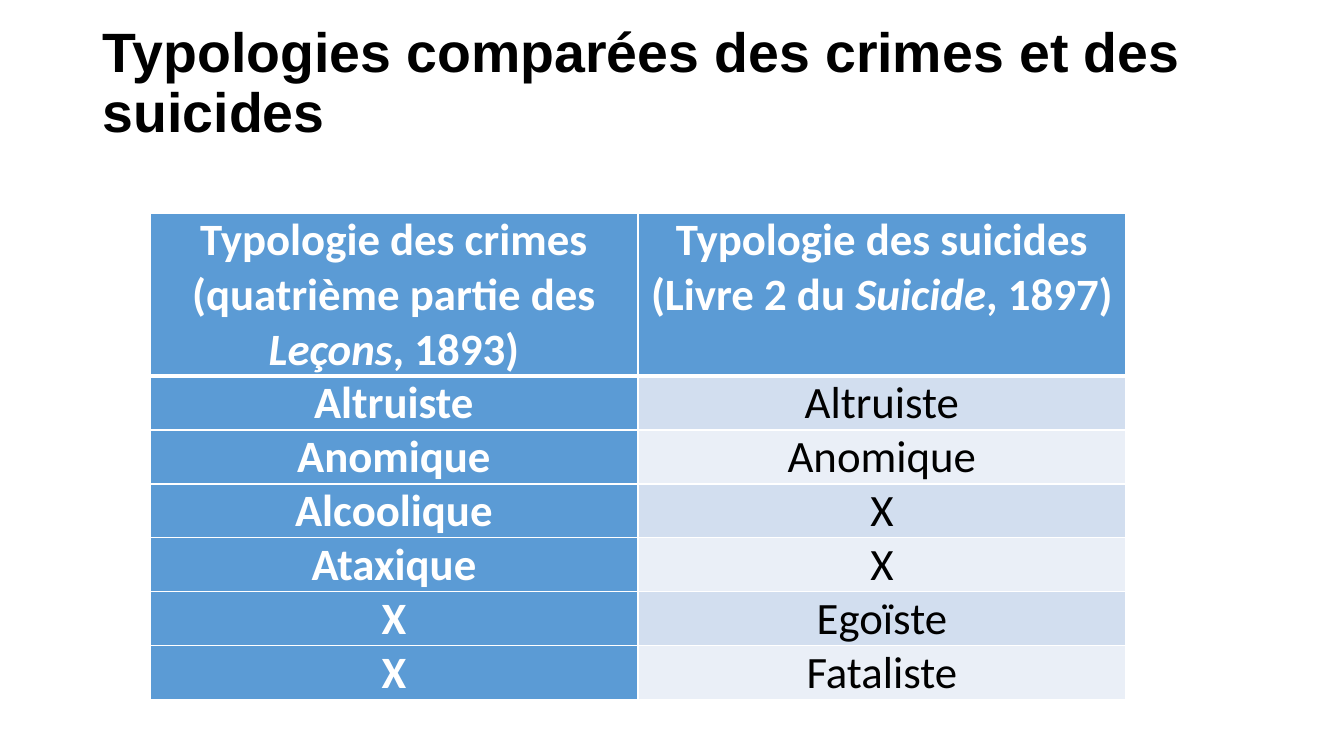
"""Build a slide comparing the typologies of crimes and suicides."""
from typing import Any, NamedTuple

from lxml.etree import SubElement
from pptx import Presentation
from pptx.dml.color import RGBColor
from pptx.enum.text import MSO_ANCHOR, PP_ALIGN
from pptx.oxml.ns import qn
from pptx.util import Emu, Pt

WHITE, BLACK, BLUE = "FFFFFF", "000000", "5B9BD5"
BANDS = ("D2DEEF", "EAEFF7")
HEADER_H, ROW_H, COL_W = 163, 54, 488


class Look(NamedTuple):
    """Fill, text colour and weight of a table cell."""
    fill: str
    color: str
    bold: bool


class Row(NamedTuple):
    """Matching types of crime and suicide."""
    crime: str
    suicide: str


HEADER = Row(
    "Typologie des crimes\n(quatrième partie des *Leçons*, 1893)",
    "Typologie des suicides\n(Livre 2 du *Suicide*, 1897)",
)
ROWS = [
    HEADER,
    Row("Altruiste", "Altruiste"),
    Row("Anomique", "Anomique"),
    Row("Alcoolique", "X"),
    Row("Ataxique", "X"),
    Row("X", "Egoïste"),
    Row("X", "Fataliste"),
]


def px(n: int) -> Emu:
    """Turn pixels into EMU."""
    return Emu(round(n * 914400 / 100.8))


def rgb(color: str) -> RGBColor:
    """Turn a hex string into a colour."""
    return RGBColor.from_string(color)


def set_attrs(obj: Any, values: dict[str, Any]) -> None:
    """Set each named attribute on an object."""
    for name, value in values.items():
        setattr(obj, name, value)


def add_run(p: Any, text: str, color: str, fmt: dict[str, Any]) -> None:
    """Add a formatted run to a paragraph."""
    r = p.add_run()
    r.text = text
    set_attrs(r.font, fmt)
    r.font.color.rgb = rgb(color)


def add_title(s: Any, text: str) -> None:
    """Add the slide title."""
    sp = s.shapes.add_textbox(px(93), px(40), px(1159), px(146))
    tf = sp.text_frame
    set_attrs(tf, {
        "word_wrap": True, "vertical_anchor": MSO_ANCHOR.MIDDLE,
        "margin_left": px(10), "margin_right": px(10),
        "margin_top": px(5), "margin_bottom": px(62),
    })
    p = tf.paragraphs[0]
    p.line_spacing = 0.9
    add_run(p, text, BLACK, {"name": "Arial", "size": Pt(39.6), "bold": True})


def set_borders(cell: Any, widths: dict[str, int]) -> None:
    """Draw white cell borders with widths in points."""
    tc_pr = cell._tc.get_or_add_tcPr()
    for side, width in widths.items():
        ln = SubElement(tc_pr, qn(f"a:ln{side}"), w=str(Pt(width)))
        fill = SubElement(ln, qn("a:solidFill"))
        SubElement(fill, qn("a:srgbClr"), val=WHITE)


def fill_cell(cell: Any, text: str, look: Look) -> None:
    """Fill a cell with centred text, with starred words in italics."""
    set_attrs(cell, {
        "margin_left": px(7), "margin_right": px(7),
        "margin_top": 0, "margin_bottom": 0,
    })
    cell.fill.solid()
    cell.fill.fore_color.rgb = rgb(look.fill)
    tf = cell.text_frame
    for i, line in enumerate(text.split("\n")):
        p = tf.add_paragraph() if i else tf.paragraphs[0]
        p.alignment = PP_ALIGN.CENTER
        for j, part in enumerate(line.split("*")):
            add_run(p, part, look.color, {
                "name": "Calibri", "size": Pt(32),
                "bold": look.bold, "italic": j % 2 == 1,
            })


def add_typologies(s: Any, rows: list[Row]) -> None:
    """Add the table of typologies."""
    height = HEADER_H + ROW_H * (len(rows) - 1)
    table = s.shapes.add_table(
        len(rows), 2, px(150), px(213), px(2 * COL_W), px(height)).table
    set_attrs(table, {"horz_banding": False, "first_col": True})
    for col in table.columns:
        col.width = px(COL_W)
    for i, row in enumerate(rows):
        table.rows[i].height = px(ROW_H if i else HEADER_H)
        for j, text in enumerate(row):
            if i == 0 or j == 0:
                look = Look(BLUE, WHITE, True)
            else:
                look = Look(BANDS[(i - 1) % 2], BLACK, False)
            cell = table.cell(i, j)
            set_borders(cell, {
                "L": 1, "R": 1,
                "T": 3 if i == 1 else 1, "B": 3 if i == 0 else 1,
            })
            fill_cell(cell, text, look)


def main() -> None:
    """Build and save the slide."""
    prs = Presentation()
    set_attrs(prs, {"slide_width": px(1344), "slide_height": px(756)})
    s = prs.slides.add_slide(prs.slide_layouts[6])
    add_title(s, "Typologies comparées des crimes et des suicides")
    add_typologies(s, ROWS)
    prs.save("out.pptx")


if __name__ == "__main__":
    main()
